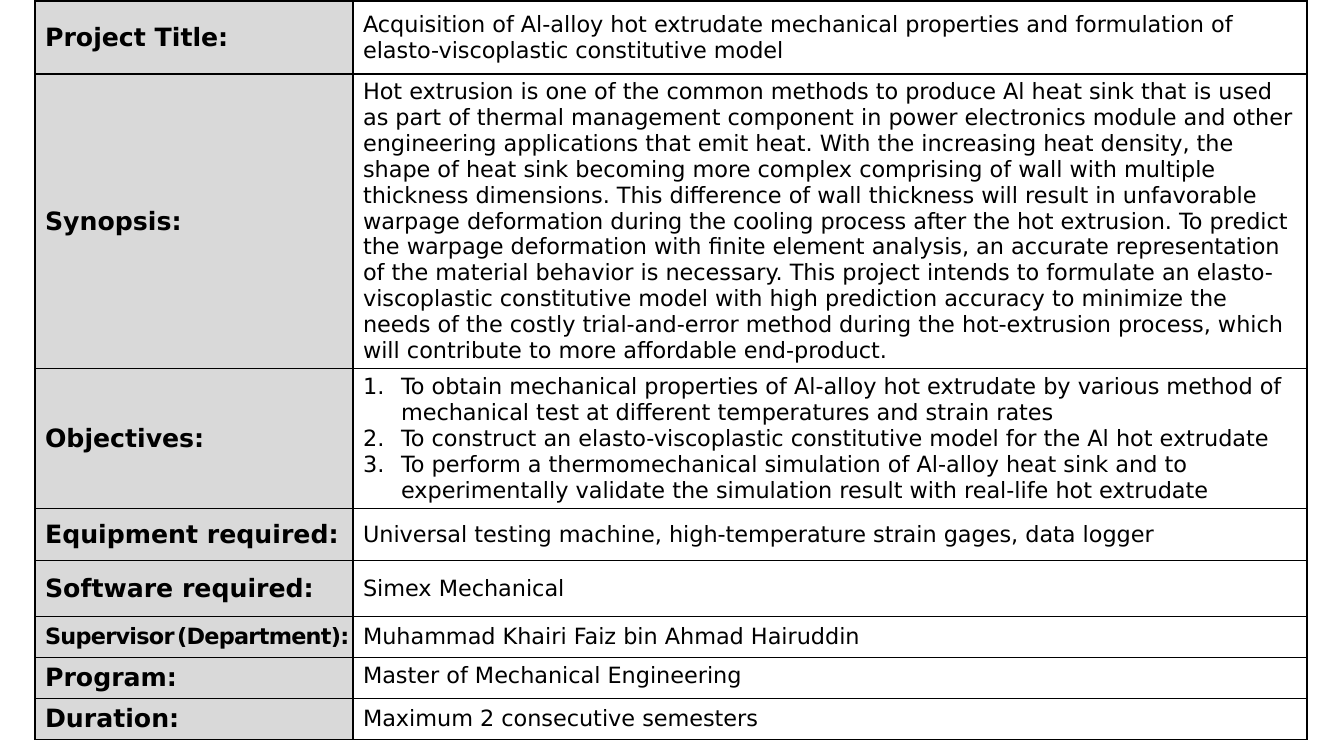
import dataclasses

import pptx
import pptx.dml.color
import pptx.enum.text
import pptx.oxml
import pptx.oxml.ns
import pptx.util

EMU_PER_PX = 914400 / 100.8
MIDDLE = pptx.enum.text.MSO_ANCHOR.MIDDLE
TOP = pptx.enum.text.MSO_ANCHOR.TOP


@dataclasses.dataclass(frozen=True)
class Theme:
    font: str = "DejaVu Sans"
    ink: str = "000000"
    label_fill: str = "D9D9D9"
    label_size: int = 18
    body_size: int = 16
    gap_size: int = 5
    border: float = 1


def px(length):
    return pptx.util.Emu(round(length * EMU_PER_PX))


def write(paragraph, text, *, theme, size, bold=False, spacing=None):
    run = paragraph.add_run()
    run.text = text
    run.font.name = theme.font
    run.font.size = pptx.util.Pt(size)
    run.font.bold = bold
    run.font.color.rgb = pptx.dml.color.RGBColor.from_string(theme.ink)
    if spacing is not None:
        run.font._element.set("spc", str(round(spacing * 100)))


class ProjectSheet:
    def __init__(self, slide, theme):
        self.slide = slide
        self.theme = theme

    def table(self, left, top, widths, heights):
        frame = self.slide.shapes.add_table(
            len(heights), len(widths),
            px(left), px(top), px(sum(widths)), px(sum(heights)))
        grid = frame.table
        grid.first_row = grid.horz_banding = False
        for column, width in zip(grid.columns, widths):
            column.width = px(width)
        for row, height in zip(grid.rows, heights):
            row.height = px(height)
        return grid

    def cell(self, cell, fill=None, anchor=MIDDLE):
        properties = cell._tc.get_or_add_tcPr()
        for side in ("lnL", "lnR", "lnT", "lnB"):
            properties.append(pptx.oxml.parse_xml(
                f'<a:{side} {pptx.oxml.ns.nsdecls("a")} w="{pptx.util.Pt(self.theme.border)}">'
                f'<a:solidFill><a:srgbClr val="{self.theme.ink}"/></a:solidFill>'
                f'</a:{side}>'))
        if fill:
            cell.fill.solid()
            cell.fill.fore_color.rgb = pptx.dml.color.RGBColor.from_string(fill)
        else:
            cell.fill.background()
        cell.vertical_anchor = anchor

    def label(self, cell, text):
        self.cell(cell, self.theme.label_fill)
        write(cell.text_frame.paragraphs[0], text, theme=self.theme,
              size=self.theme.label_size, bold=True)

    def tight_label(self, cell, first, second):
        self.cell(cell, self.theme.label_fill)
        cell.margin_right = 0
        body, gap = self.theme.body_size, self.theme.gap_size
        for text, size in ((first, body), (" ", gap), (second, body)):
            write(cell.text_frame.paragraphs[0], text, theme=self.theme,
                  size=size, bold=True, spacing=-0.5)

    def body(self, cell, text, anchor=MIDDLE):
        self.cell(cell, anchor=anchor)
        write(cell.text_frame.paragraphs[0], text, theme=self.theme,
              size=self.theme.body_size)

    def numbered(self, cell, items, indent):
        self.cell(cell)
        frame = cell.text_frame
        for index, item in enumerate(items):
            paragraph = frame.add_paragraph() if index else frame.paragraphs[0]
            properties = paragraph._p.get_or_add_pPr()
            properties.set("marL", str(px(indent)))
            properties.set("indent", str(-px(indent)))
            properties.append(pptx.oxml.parse_xml(
                f'<a:buAutoNum {pptx.oxml.ns.nsdecls("a")} type="arabicPeriod"/>'))
            write(paragraph, item, theme=self.theme, size=self.theme.body_size)


SYNOPSIS = " ".join([
    "Hot extrusion is one of the common methods to produce Al heat sink that is used "
    "as part of thermal management component in power electronics module and other "
    "engineering applications that emit heat.",
    "With the increasing heat density, the shape of heat sink becoming more complex "
    "comprising of wall with multiple thickness dimensions.",
    "This difference of wall thickness will result in unfavorable warpage deformation "
    "during the cooling process after the hot extrusion.",
    "To predict the warpage deformation with finite element analysis, an accurate "
    "representation of the material behavior is necessary.",
    "This project intends to formulate an elasto-viscoplastic constitutive model with "
    "high prediction accuracy to minimize the needs of the costly trial-and-error method "
    "during the hot-extrusion process, which will contribute to more affordable end-product.",
])
OBJECTIVES = [
    "To obtain mechanical properties of Al-alloy hot extrudate by various method of "
    "mechanical test at different temperatures and strain rates",
    "To construct an elasto-viscoplastic constitutive model for the Al hot extrudate",
    "To perform a thermomechanical simulation of Al-alloy heat sink and to "
    "experimentally validate the simulation result with real-life hot extrudate",
]
DETAILS = [
    ("Project Title:", 73,
     "Acquisition of Al-alloy hot extrudate mechanical properties and formulation of "
     "elasto-viscoplastic constitutive model"),
    ("Synopsis:", 294, SYNOPSIS),
    ("Objectives:", 140, OBJECTIVES),
    ("Equipment required:", 52,
     "Universal testing machine, high-temperature strain gages, data logger"),
    ("Software required:", 56, "Simex Mechanical"),
    (("Supervisor", "(Department):"), 41, "Muhammad Khairi Faiz bin Ahmad Hairuddin"),
    ("Program:", 41, "Master of Mechanical Engineering"),
    ("Duration:", 41, "Maximum 2 consecutive semesters"),
]


def main():
    deck = pptx.Presentation()
    deck.slide_width, deck.slide_height = px(1344), px(756)
    sheet = ProjectSheet(deck.slides.add_slide(deck.slide_layouts[6]), Theme())
    grid = sheet.table(35, 1, [318, 954], [height for _, height, _ in DETAILS])
    for row, (label, _, content) in enumerate(DETAILS):
        label_cell, content_cell = grid.cell(row, 0), grid.cell(row, 1)
        if isinstance(label, tuple):
            sheet.tight_label(label_cell, *label)
        else:
            sheet.label(label_cell, label)
        if isinstance(content, list):
            sheet.numbered(content_cell, content, indent=38)
        else:
            sheet.body(content_cell, content, TOP if label == "Program:" else MIDDLE)
    deck.save("out.pptx")


if __name__ == "__main__":
    main()
